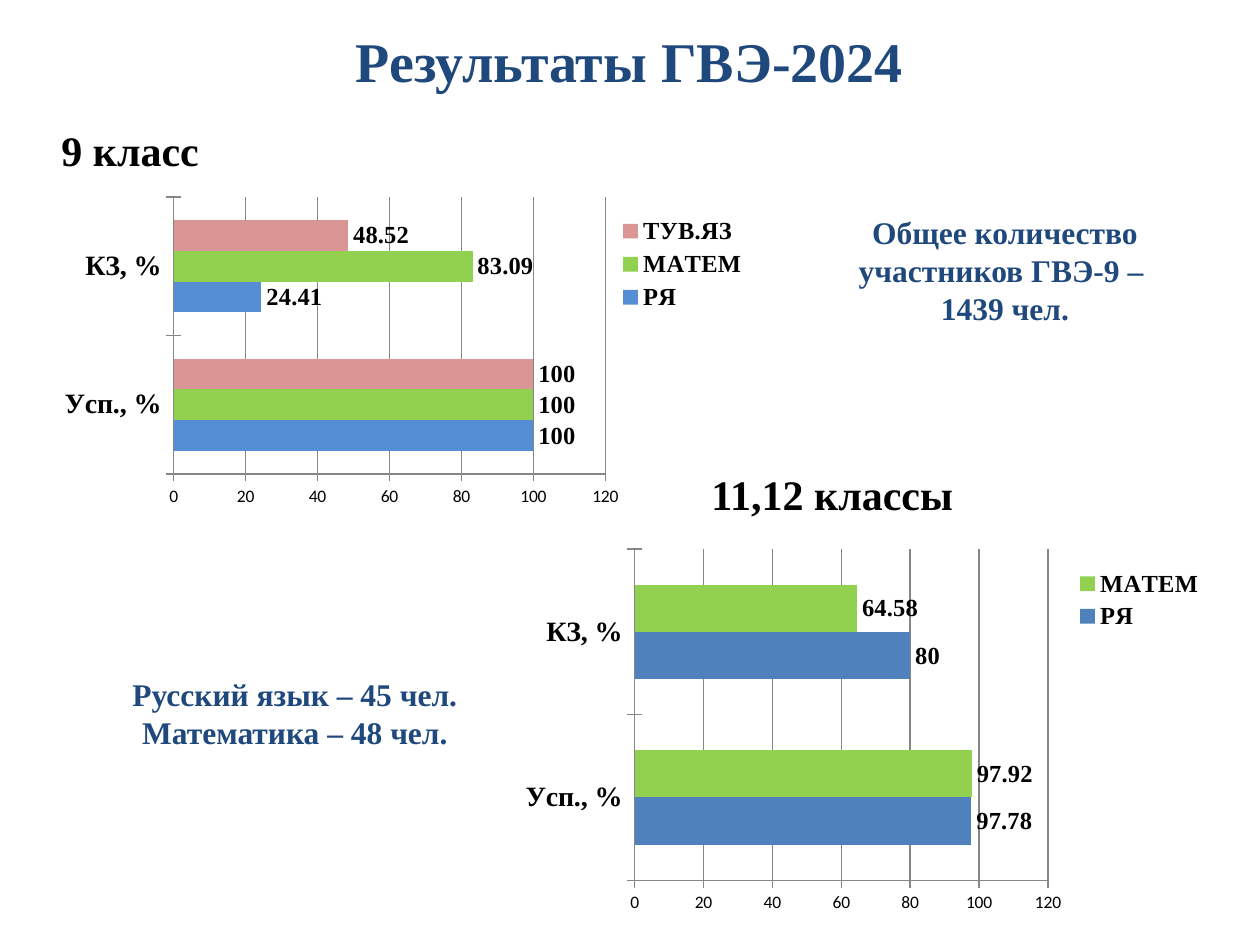
import pptx
import pptx.util
import pptx.chart.data
import pptx.dml.color
import pptx.enum.chart
import pptx.enum.text
import pptx.oxml

INK = {"navy": "1F497D", "black": "000000", "white": "FFFFFF", "grid": "868686",
       "sky": "558ED5", "blue": "4F81BD", "green": "92D050", "rose": "D99694"}
SERIF = "Times New Roman"
HEAD = {"size": 32, "bold": True, "name": SERIF}
SUB = {"size": 24, "bold": True, "name": SERIF}
NOTE = {"size": 18, "bold": True, "name": SERIF}
CAT = {"size": 16, "bold": True, "name": SERIF}
KEY = {"size": 14, "bold": True, "name": SERIF}
BASE = {"size": 10, "bold": False, "name": "Calibri"}

TEXTS = [
    ((29, 20, 1201, 81), ["Результаты ГВЭ-2024"], HEAD, "navy", "CENTER", True),
    ((49, 118, 164, 63), ["9 класс"], SUB, "black", "LEFT", False),
    ((699, 462, 270, 63), ["11,12 классы"], SUB, "black", "LEFT", False),
    ((118, 669, 354, 89), ["Русский язык – 45 чел.", "Математика – 48 чел."],
     NOTE, "navy", "CENTER", False),
    ((808, 207, 394, 127), ["Общее количество участников ГВЭ-9 – ", "1439 чел."],
     NOTE, "navy", "CENTER", True),
]
CATS = ["Усп., %", "КЗ, %"]
CHARTS = [
    {"box": (29, 178, 738, 353), "plot": (174, 197, 432, 277), "key": (615, 212, 135, 105),
     "rows": [("РЯ", (100, 24.41), "sky"), ("МАТЕМ", (100, 83.09), "green"),
              ("ТУВ.ЯЗ", (100, 48.52), "rose")]},
    {"box": (512, 542, 709, 378), "plot": (635, 549, 413, 331), "key": (1072, 565, 135, 70),
     "rows": [("РЯ", (97.78, 80), "blue"), ("МАТЕМ", (97.92, 64.58), "green")]},
]


def px(n):
    return pptx.util.Emu(round(n * 914400 / 126))


def rgb(key):
    return pptx.dml.color.RGBColor.from_string(INK[key])


def style(font, form, ink="black"):
    for key, val in form.items():
        setattr(font, key, pptx.util.Pt(val) if key == "size" else val)
    font.color.rgb = rgb(ink)


def place(node, spot, box, part, inner=False):
    for old in node.findall(pptx.oxml.ns.qn("c:layout")):
        node.remove(old)
    left, top, wide, high = box
    x, y, w, h = part
    vals = {"x": (x - left) / wide, "y": (y - top) / high, "w": w / wide, "h": h / high}
    tags = '<c:layoutTarget val="inner"/>' if inner else ""
    tags += '<c:xMode val="edge"/><c:yMode val="edge"/>'
    tags += "".join(f'<c:{k} val="{v:.3f}"/>' for k, v in vals.items())
    node.insert(spot, pptx.oxml.parse_xml(
        f'<c:layout {pptx.oxml.ns.nsdecls("c")}><c:manualLayout>{tags}</c:manualLayout></c:layout>'))


def write(slide, box, lines, form, ink, align, wrap):
    frame = slide.shapes.add_textbox(*map(px, box)).text_frame
    frame.word_wrap = wrap
    frame.auto_size = pptx.enum.text.MSO_AUTO_SIZE.SHAPE_TO_FIT_TEXT
    for i, line in enumerate(lines):
        para = frame.add_paragraph() if i else frame.paragraphs[0]
        para.alignment = getattr(pptx.enum.text.PP_ALIGN, align)
        run = para.add_run()
        run.text = line
        style(run.font, form, ink)


def draw(slide, item):
    data = pptx.chart.data.CategoryChartData()
    data.categories = CATS
    for name, vals, ink in item["rows"]:
        data.add_series(name, vals)
    chart = slide.shapes.add_chart(
        pptx.enum.chart.XL_CHART_TYPE.BAR_CLUSTERED, *map(px, item["box"]), data).chart
    style(chart.font, BASE)
    chart.has_title = False
    chart.has_legend = True
    key = chart.legend
    key.position = pptx.enum.chart.XL_LEGEND_POSITION.RIGHT
    key.include_in_layout = False
    style(key.font, KEY)

    cat, val = chart.category_axis, chart.value_axis
    val.minimum_scale, val.maximum_scale, val.major_unit = 0, 120, 20
    val.has_major_gridlines = True
    cat.major_tick_mark = val.major_tick_mark = pptx.enum.chart.XL_TICK_MARK.CROSS
    style(cat.tick_labels.font, CAT)
    style(val.tick_labels.font, BASE)
    for line in (cat.format.line, val.format.line, val.major_gridlines.format.line):
        line.color.rgb = rgb("grid")
        line.width = pptx.util.Pt(0.75)

    plot = chart.plots[0]
    for name, flag in {"gap_width": 150, "overlap": 0, "vary_by_categories": False}.items():
        setattr(plot, name, flag)
    for row, (name, vals, ink) in zip(plot.series, item["rows"]):
        row.format.fill.solid()
        row.format.fill.fore_color.rgb = rgb(ink)
        row.data_labels.show_value = True
        row.data_labels.position = pptx.enum.chart.XL_LABEL_POSITION.OUTSIDE_END
        style(row.data_labels.font, KEY)

    area = chart.element.find(".//" + pptx.oxml.ns.qn("c:plotArea"))
    side = chart.element.find(".//" + pptx.oxml.ns.qn("c:legend"))
    place(area, 0, item["box"], item["plot"], True)
    place(side, 1, item["box"], item["key"])


def main():
    deck = pptx.Presentation()
    deck.slide_width, deck.slide_height = px(1260), px(945)
    slide = deck.slides.add_slide(deck.slide_layouts[6])
    slide.background.fill.solid()
    slide.background.fill.fore_color.rgb = rgb("white")
    for item in CHARTS:
        draw(slide, item)
    for text in TEXTS:
        write(slide, *text)
    deck.save("out.pptx")


if __name__ == "__main__":
    main()
